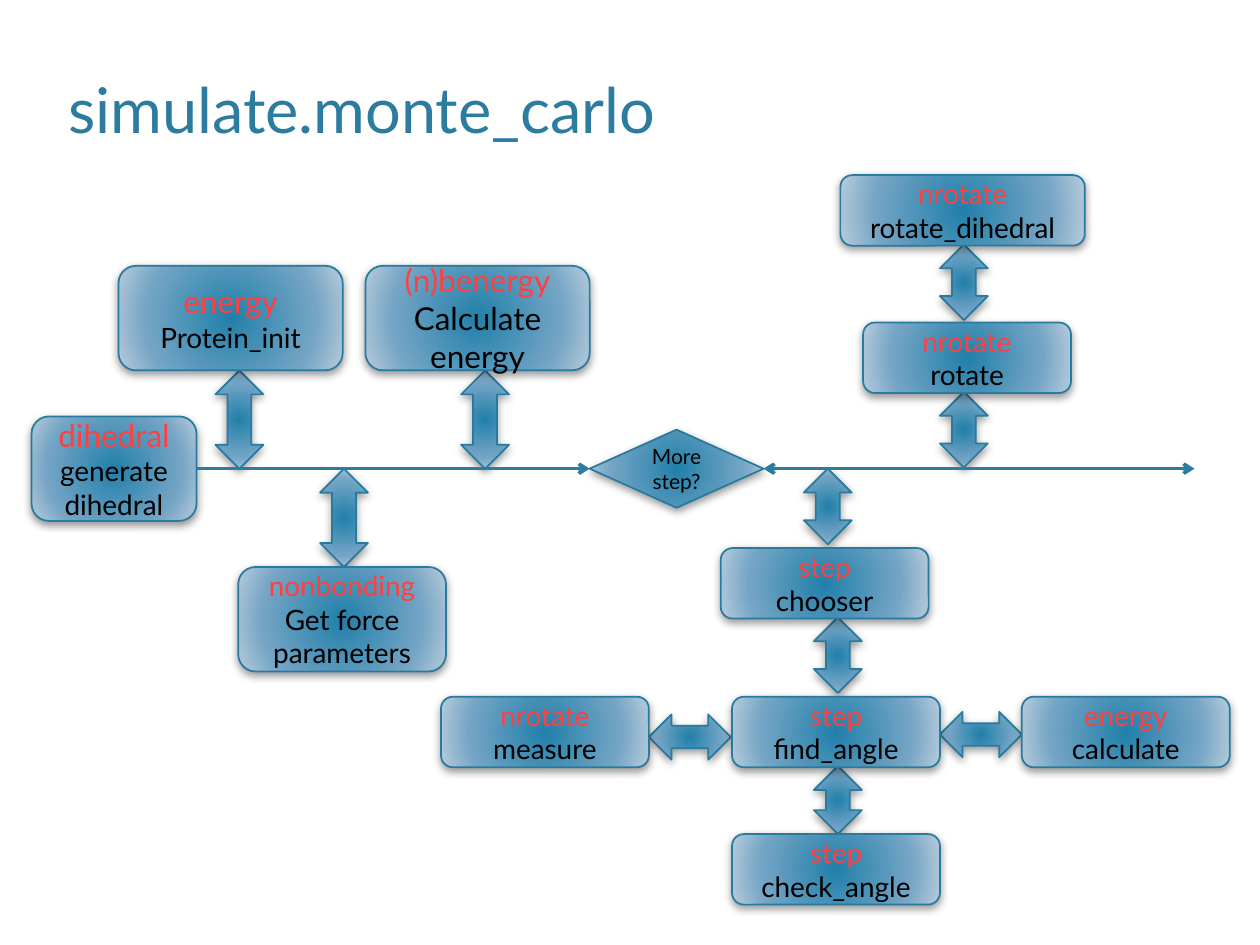
"""Build the call-flow slide for simulate.monte_carlo."""
import pptx
import pptx.dml.color
import pptx.enum.shapes
import pptx.enum.text
import pptx.oxml
import pptx.oxml.ns
import pptx.util

FONT, MODULE, TEXT, TIMELINE, OUTLINE = "Lato", "FF4040", "000000", "2C7C9F", "287A9E"
NS = pptx.oxml.ns.nsdecls("a")
GLOW = "".join(
    f'<a:gs pos="{share * 1000}"><a:srgbClr val="{tone}"/></a:gs>'
    for share, tone in ((0, "2180AA"), (69, "75A5C5"), (100, "B8CCDC"))
)
GRADIENT = (f'<a:gradFill {NS} rotWithShape="1"><a:gsLst>{GLOW}</a:gsLst><a:path path="circle">'
            '<a:fillToRect l="100000" t="100000" r="100000" b="100000"/></a:path></a:gradFill>')
SHADOW = (f'<a:outerShdw {NS} blurRad="63500" dist="25400" dir="5400000" rotWithShape="0">'
          '<a:srgbClr val="000000"><a:alpha val="40000"/></a:srgbClr></a:outerShdw>')
KIND = pptx.enum.shapes.MSO_SHAPE
ALIGN = pptx.enum.text.PP_ALIGN
ANCHOR = pptx.enum.text.MSO_ANCHOR


def colour(code):
    return pptx.dml.color.RGBColor.from_string(code)


def add_node(kind, left, top, width, height, lines=()):
    node = slide.shapes.add_shape(
        kind, int(left * col), int(top * row), int(width * col), int(height * row))
    node.line.color.rgb = colour(OUTLINE)
    node.line.width = pptx.util.Pt(1)
    node.shadow.inherit = False
    properties = node._element.spPr
    properties.find(pptx.oxml.ns.qn("a:prstGeom")).addnext(pptx.oxml.parse_xml(GRADIENT))
    properties.find(pptx.oxml.ns.qn("a:effectLst")).append(pptx.oxml.parse_xml(SHADOW))
    node.text_frame.vertical_anchor = ANCHOR.MIDDLE
    for index, (words, size, tone) in enumerate(lines):
        line = node.text_frame.add_paragraph() if index else node.text_frame.paragraphs[0]
        line.alignment = ALIGN.CENTER
        run = line.add_run()
        run.text = words
        for key, value in {"name": FONT, "size": pptx.util.Pt(size)}.items():
            setattr(run.font, key, value)
        run.font.color.rgb = colour(tone)
    return node


deck = pptx.Presentation()
deck.slide_width, deck.slide_height = pptx.util.Inches(10), pptx.util.Inches(7.5)
col, row = deck.slide_width / 100, deck.slide_height / 75
slide = deck.slides.add_slide(deck.slide_layouts[5])

heading = slide.shapes.title
for key, value in {"left": 4.4 * col, "top": 3.3 * row,
                   "width": 88 * col, "height": 8.8 * row}.items():
    setattr(heading, key, int(value))
heading.text_frame.text = "simulate.monte_carlo"
for key, value in {"vertical_anchor": ANCHOR.BOTTOM, "word_wrap": True,
                   "auto_size": pptx.enum.text.MSO_AUTO_SIZE.NONE}.items():
    setattr(heading.text_frame, key, value)
heading_line = heading.text_frame.paragraphs[0]
heading_line.alignment = ALIGN.LEFT
for key, value in {"name": FONT, "size": pptx.util.Pt(36)}.items():
    setattr(heading_line.font, key, value)
heading_line.font.color.rgb = colour(TIMELINE)

lane = 37.2
for centre, top, height in (
    (19, 29.4, 7.8), (27.3, lane, 7.8), (38.5, 29.4, 7.8),
    (65.7, lane, 6), (66.5, 49, 6), (66.5, 60.8, 5.4),
    (76.5, 31.1, 6), (76.5, 19.4, 6),
):
    add_node(KIND.UP_DOWN_ARROW, centre - 1.9, top, 3.8, height)
for left, top in ((51.5, 56.7), (74.6, 56.5)):
    add_node(KIND.LEFT_RIGHT_ARROW, left, top, 6.5, 3.6)

tall, short = 8.3, 5.6
for left, top, width, height, module, size, step, step_size in (
    (9.4, 21.1, 17.8, tall, "energy", 18, ["Protein_init"], 16),
    (29, 21.1, 17.8, tall, "(n)benergy", 18, ["Calculate", "energy"], 18),
    (18.9, 45, 16.5, tall, "nonbonding", 16, ["Get force parameters"], 16),
    (57.2, 43.5, 16.5, short, "step", 16, ["chooser"], 16),
    (58.1, 55.3, 16.5, short, "step", 16, ["find_angle"], 16),
    (35, 55.3, 16.5, short, "nrotate", 16, ["measure"], 16),
    (81.1, 55.3, 16.5, short, "energy", 16, ["calculate"], 16),
    (58.1, 66.2, 16.5, short, "step", 16, ["check_angle"], 16),
    (68.5, 25.6, 16.5, short, "nrotate", 16, ["rotate"], 16),
    (66.7, 13.9, 19.4, short, "nrotate", 16, ["rotate_dihedral"], 16),
    (2.5, lane - tall / 2, 13.1, tall, "dihedral", 18, ["generate", "dihedral"], 16),
):
    start = add_node(KIND.ROUNDED_RECTANGLE, left, top, width, height,
                     [(module, size, MODULE)] + [(words, step_size, TEXT) for words in step])
decision = add_node(KIND.DIAMOND, 46.8, lane - 3.1, 13.8, 6.2, [("More step?", 12, TEXT)])

for origin, target, begin, end, heads in (
    (start, decision, 15.6, 46.8, ["tailEnd"]),
    (decision, None, 60.6, 94.8, ["headEnd", "tailEnd"]),
):
    timeline = slide.shapes.add_connector(
        pptx.enum.shapes.MSO_CONNECTOR.STRAIGHT,
        int(begin * col), int(lane * row), int(end * col), int(lane * row))
    timeline.begin_connect(origin, 3)
    if target:
        timeline.end_connect(target, 1)
    timeline.line.color.rgb = colour(TIMELINE)
    timeline.line.width = pptx.util.Pt(2)
    for head in heads:
        timeline.line._get_or_add_ln().append(
            pptx.oxml.parse_xml(f'<a:{head} {NS} type="arrow"/>'))
    timeline._element.spPr.append(pptx.oxml.parse_xml(f"<a:effectLst {NS}/>"))

deck.save("out.pptx")
